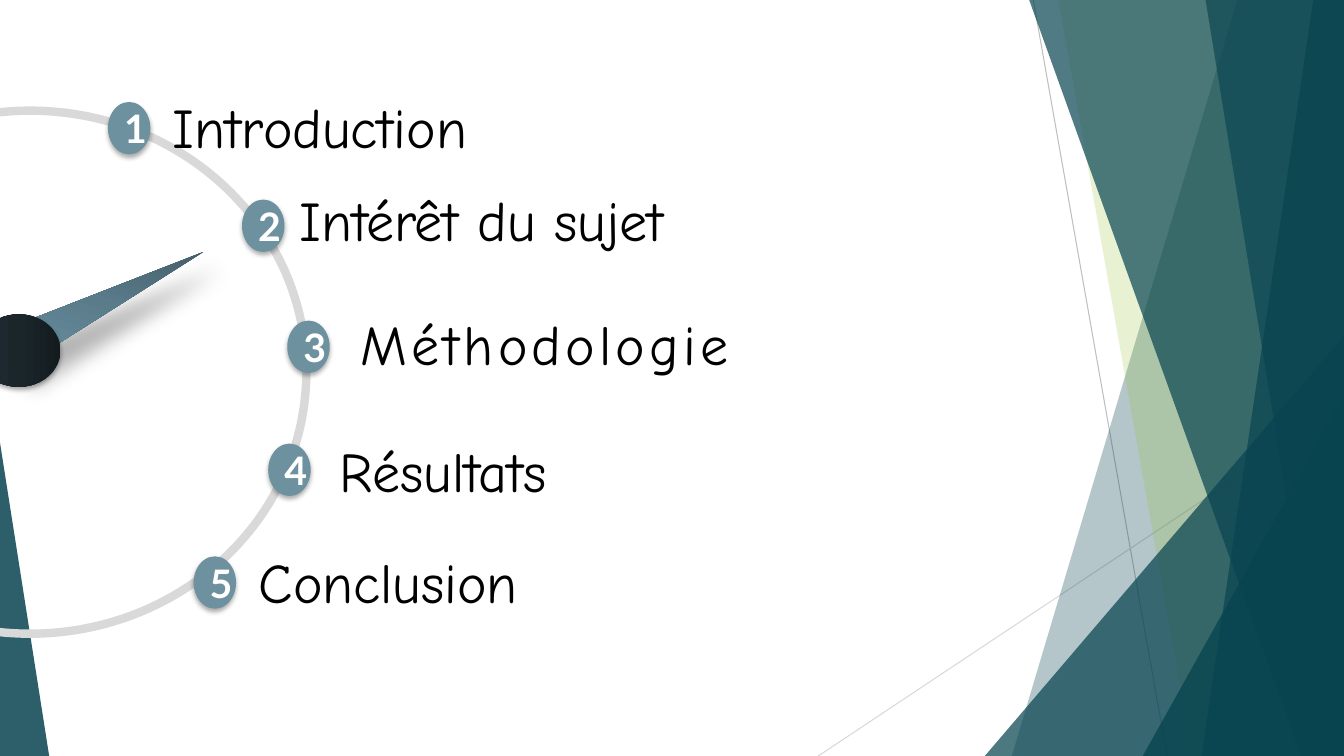
import copy
from dataclasses import dataclass

import pptx
import pptx.dml.color
import pptx.enum.shapes
import pptx.enum.text
import pptx.oxml
import pptx.oxml.ns
import pptx.util

Cm, Pt = pptx.util.Cm, pptx.util.Pt
RGB = pptx.dml.color.RGBColor.from_string
SHAPE = pptx.enum.shapes.MSO_SHAPE
qn = pptx.oxml.ns.qn


@dataclass(frozen=True)
class Theme:
    teal: str = "084450"
    lime: str = "90C226"
    badge: str = "6E91A0"
    ring: str = "D9D9D9"
    guide: str = "BFBFBF"
    text: str = "000000"
    number: str = "FFFFFF"
    needle: tuple = ("3F5761", "5A7B8A", "6B92A4")
    hub: tuple = ("131B1F", "1B262B", "202E34")
    text_font: str = "Comic Neue"
    number_font: str = "Lato"
    text_size: int = 40
    number_size: int = 28


theme = Theme()
WIDTH, HEIGHT = 33.87, 19.05


def paint(shape, colour, opacity=100):
    """Flat fill with the given opacity in percent, no outline, no shadow."""
    shape.shadow.inherit = False
    shape.line.fill.background()
    shape.fill.solid()
    shape.fill.fore_color.rgb = RGB(colour)
    if opacity < 100:
        colour_xml = shape.fill._xPr.find(qn("a:solidFill"))[0]
        alpha = colour_xml.makeelement(qn("a:alpha"), {"val": str(opacity * 1000)})
        colour_xml.append(alpha)


def cast_shadow(shape, opacity, blur, distance, angle):
    """Outer shadow: opacity in percent, blur and distance in points."""
    shape.shadow.inherit = False
    effects = shape._element.spPr.find(qn("a:effectLst"))
    effects.append(pptx.oxml.parse_xml(
        '<a:outerShdw xmlns:a="http://schemas.openxmlformats.org/drawingml/2006/main" '
        f'blurRad="{Pt(blur)}" dist="{Pt(distance)}" dir="{angle * 60000}" '
        'algn="ctr" rotWithShape="0"><a:srgbClr val="000000">'
        f'<a:alpha val="{opacity * 1000}"/></a:srgbClr></a:outerShdw>'))


deck = pptx.Presentation()
deck.slide_width, deck.slide_height = Cm(WIDTH), Cm(HEIGHT)
slide = deck.slides.add_slide(deck.slide_layouts[6])
shapes = slide.shapes

# Thin guide lines behind the facets
for x1, y1, x2, y2, colour in [
    (26.04, 0, 29.41, HEIGHT, theme.guide),
    (WIDTH, 10.24, 20.62, HEIGHT, theme.ring),
]:
    guide = shapes.add_connector(
        pptx.enum.shapes.MSO_CONNECTOR.STRAIGHT, Cm(x1), Cm(y1), Cm(x2), Cm(y2))
    guide.line.color.rgb = RGB(colour)
    guide.line.width = Pt(0.75)
    guide_xml = guide._element.spPr
    guide_xml.append(guide_xml.makeelement(qn("a:effectLst"), {}))

# Facets against the right edge: top x, top y, bottom x, colour, opacity
for top_x, top_y, bottom_x, colour, opacity in [
    (31.19, -0.02, 25.50, theme.teal, 30),
    (26.67, -0.02, 30.05, theme.lime, 20),
    (WIDTH, 8.46, 24.82, theme.teal, 72),
    (25.93, -0.02, 32.79, theme.teal, 70),
    (33.10, -0.02, 30.28, theme.teal, 70),
    (30.38, -0.02, 33.48, theme.teal, 65),
    (WIDTH, 9.98, 28.80, theme.teal, 80),
]:
    if top_x == WIDTH:
        facet = shapes.add_shape(
            SHAPE.ISOSCELES_TRIANGLE, Cm(bottom_x), Cm(top_y),
            Cm(WIDTH - bottom_x), Cm(HEIGHT - top_y))
        facet.adjustments[0] = 1
    else:
        outline = shapes.build_freeform(Cm(top_x), Cm(top_y))
        outline.add_line_segments([
            (Cm(WIDTH), Cm(top_y)), (Cm(WIDTH), Cm(HEIGHT)), (Cm(bottom_x), Cm(HEIGHT))])
        facet = outline.convert_to_shape()
    paint(facet, colour, opacity)

# Wedge in the lower left corner
wedge = shapes.add_shape(
    SHAPE.ISOSCELES_TRIANGLE, 0, Cm(11.15), Cm(1.24), Cm(HEIGHT - 11.15))
wedge.adjustments[0] = 0
paint(wedge, theme.teal, 85)

# Dial needle and hub
needle = shapes.add_shape(
    SHAPE.ISOSCELES_TRIANGLE, Cm(2.08), Cm(4.80), Cm(1.07), Cm(5.59))
needle.adjustments[0] = 0.465
needle.rotation = 62.8
needle._element.spPr.xfrm.set("flipH", "1")
cast_shadow(needle, 30, 15, 18, 45)

hub = shapes.add_shape(SHAPE.OVAL, Cm(-0.58), Cm(7.92), Cm(2.11), Cm(1.83))
cast_shadow(hub, 32, 3.5, 2.2, 90)

for dial_part, colours, angle in [(needle, theme.needle, 225), (hub, theme.hub, 180)]:
    dial_part.line.fill.background()
    dial_part.fill.gradient()
    dial_part.fill.gradient_angle = angle
    stop_list = dial_part.fill._xPr.find(qn("a:gradFill")).find(qn("a:gsLst"))
    stop_list.append(copy.deepcopy(stop_list[-1]))
    for stop, colour, position in zip(dial_part.fill.gradient_stops, colours, (0, 0.5, 1)):
        stop.color.rgb = RGB(colour)
        stop.position = position

# Dial ring
ring = shapes.add_shape(SHAPE.ARC, Cm(-6.20), Cm(2.79), Cm(13.92), Cm(13.18))
ring.adjustments[0], ring.adjustments[1] = 157.626, 58.503
ring.shadow.inherit = False
ring.fill.background()
ring.line.color.rgb = RGB(theme.ring)
ring.line.width = Pt(6)

# Agenda: heading, badge x and y, heading x, y and width, letter spacing
agenda = [
    ("Introduction", 2.72, 2.57, 4.11, 2.21, 21.13, 0),
    ("Intérêt du sujet", 6.10, 5.03, 7.29, 4.55, 21.13, 0),
    ("Méthodologie", 7.24, 8.08, 8.84, 7.67, 17.35, 3),
    ("Résultats", 6.76, 11.18, 8.31, 10.87, 18.08, 0),
    ("Conclusion", 4.88, 14.02, 6.27, 13.67, 19.79, 0),
]
for number, (heading, badge_x, badge_y, x, y, width, spacing) in enumerate(agenda, 1):
    badge = shapes.add_shape(SHAPE.OVAL, Cm(badge_x), Cm(badge_y), Cm(1.07), Cm(1.32))
    paint(badge, theme.badge)
    cast_shadow(badge, 32, 3.5, 2.2, 90)
    badge.text_frame.vertical_anchor = pptx.enum.text.MSO_ANCHOR.MIDDLE
    badge_line = badge.text_frame.paragraphs[0]
    badge_line.alignment = pptx.enum.text.PP_ALIGN.CENTER
    digit = badge_line.add_run()
    digit.text = str(number)
    digit.font.name = theme.number_font
    digit.font.size = Pt(theme.number_size)
    digit.font.bold = True
    digit.font.color.rgb = RGB(theme.number)

    entry = shapes.add_textbox(Cm(x), Cm(y), Cm(width), Cm(1.96)).text_frame
    entry.word_wrap = True
    entry.auto_size = pptx.enum.text.MSO_AUTO_SIZE.SHAPE_TO_FIT_TEXT
    title = entry.paragraphs[0].add_run()
    title.text = heading
    title.font.name = theme.text_font
    title.font.size = Pt(theme.text_size)
    title.font.color.rgb = RGB(theme.text)
    if spacing:
        title.font._element.set("spc", str(spacing * 100))

deck.save("out.pptx")
